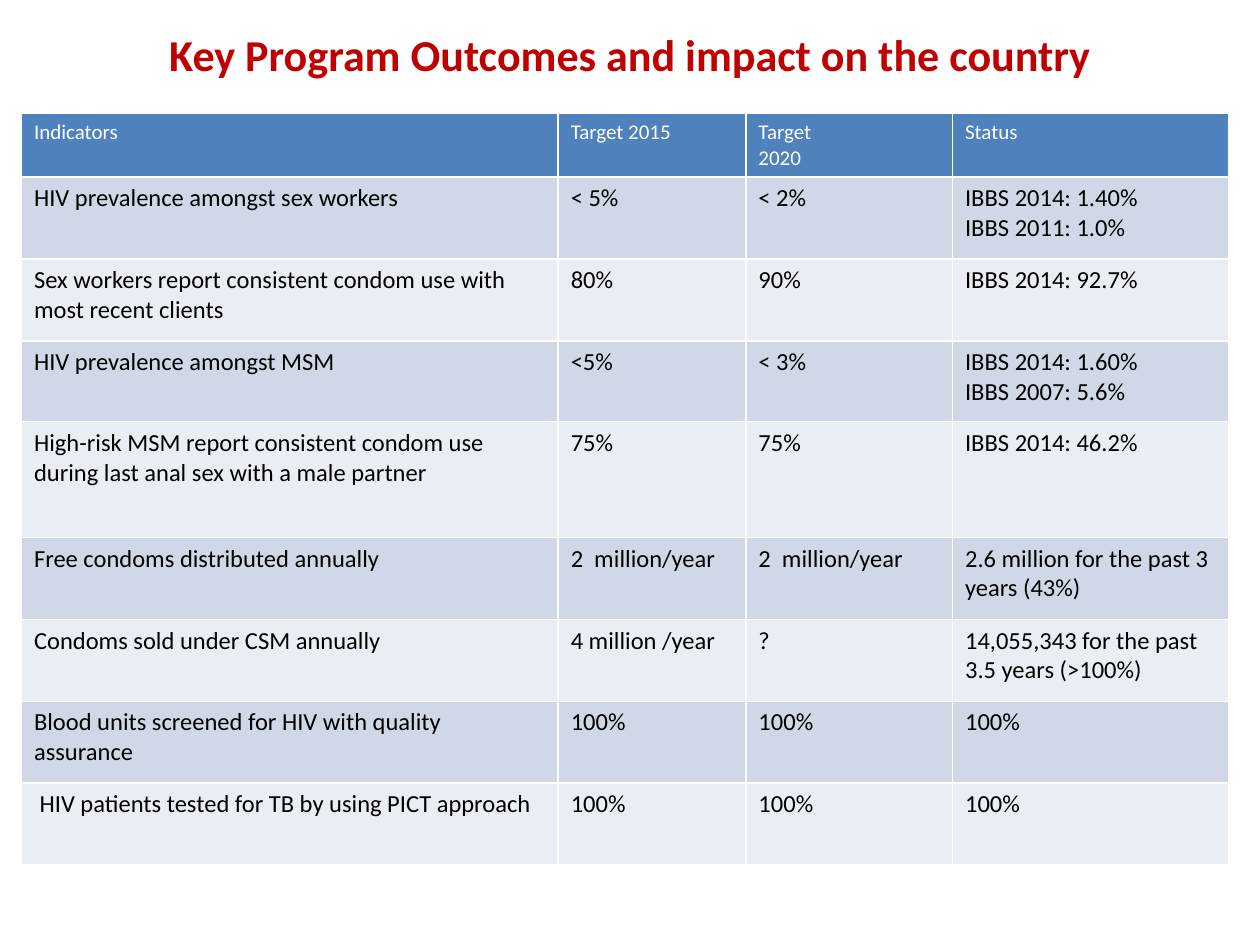
import pptx
import pptx.dml.color
import pptx.enum.text
import pptx.util
from pptx.util import Inches

HEADER_FILL = "4F81BD"
BAND_FILLS = ["D0D8E8", "E9EDF4"]
COLUMN_WIDTHS = [4.26, 1.49, 1.64, 2.19]
ROW_HEIGHTS = [0.48, 0.65, 0.65, 0.64, 0.92, 0.65, 0.65, 0.65, 0.65]
ROWS = [
    ["Indicators", "Target 2015", "Target\n2020", "Status"],
    ["HIV prevalence amongst sex workers", "< 5%", "< 2%",
     "IBBS 2014: 1.40%\nIBBS 2011: 1.0%"],
    ["Sex workers report consistent condom use with most recent clients",
     "80%", "90%", "IBBS 2014: 92.7%"],
    ["HIV prevalence amongst MSM", "<5%", "< 3%",
     "IBBS 2014: 1.60%\nIBBS 2007: 5.6%"],
    ["High-risk MSM report consistent condom use during last anal sex with a male partner",
     "75%", "75%", "IBBS 2014: 46.2%"],
    ["Free condoms distributed annually", "2  million/year", "2  million/year",
     "2.6 million for the past 3 years (43%)"],
    ["Condoms sold under CSM annually", "4 million /year", "?",
     "14,055,343 for the past 3.5 years (>100%)"],
    ["Blood units screened for HIV with quality assurance", "100%", "100%", "100%"],
    [" HIV patients tested for TB by using PICT approach", "100%", "100%", "100%"],
]


def rgb(color):
    return pptx.dml.color.RGBColor.from_string(color)


def write_text(text_frame, text, color, **font_format):
    text_frame.text = text
    for paragraph in text_frame.paragraphs:
        font = paragraph.runs[0].font
        font.color.rgb = rgb(color)
        for name, value in font_format.items():
            setattr(font, name, value)


presentation = pptx.Presentation()
presentation.slide_width = Inches(10)
presentation.slide_height = Inches(7.5)
slide = presentation.slides.add_slide(presentation.slide_layouts[5])

title = slide.shapes.title
title_place = {"left": 0.5, "top": 0.15, "width": 9, "height": 0.55}
for name, value in title_place.items():
    setattr(title, name, Inches(value))
write_text(title.text_frame, "Key Program Outcomes and impact on the country",
           "C00000", name="Calibri", size=pptx.util.Pt(25.2), bold=True)
title.text_frame.vertical_anchor = pptx.enum.text.MSO_ANCHOR.MIDDLE
title.text_frame.paragraphs[0].alignment = pptx.enum.text.PP_ALIGN.CENTER

table = slide.shapes.add_table(
    len(ROWS), len(COLUMN_WIDTHS), Inches(0.17), Inches(0.9),
    Inches(sum(COLUMN_WIDTHS)), Inches(sum(ROW_HEIGHTS))).table
for column, width in zip(table.columns, COLUMN_WIDTHS):
    column.width = Inches(width)

for row_index, (row, height, texts) in enumerate(zip(table.rows, ROW_HEIGHTS, ROWS)):
    row.height = Inches(height)
    is_header = row_index == 0
    fill = HEADER_FILL if is_header else BAND_FILLS[(row_index - 1) % 2]
    for cell, text in zip(row.cells, texts):
        cell.fill.solid()
        cell.fill.fore_color.rgb = rgb(fill)
        write_text(cell.text_frame, text, "FFFFFF" if is_header else "000000",
                   name="Calibri", size=pptx.util.Pt(12 if is_header else 14),
                   bold=False)

presentation.save("out.pptx")
